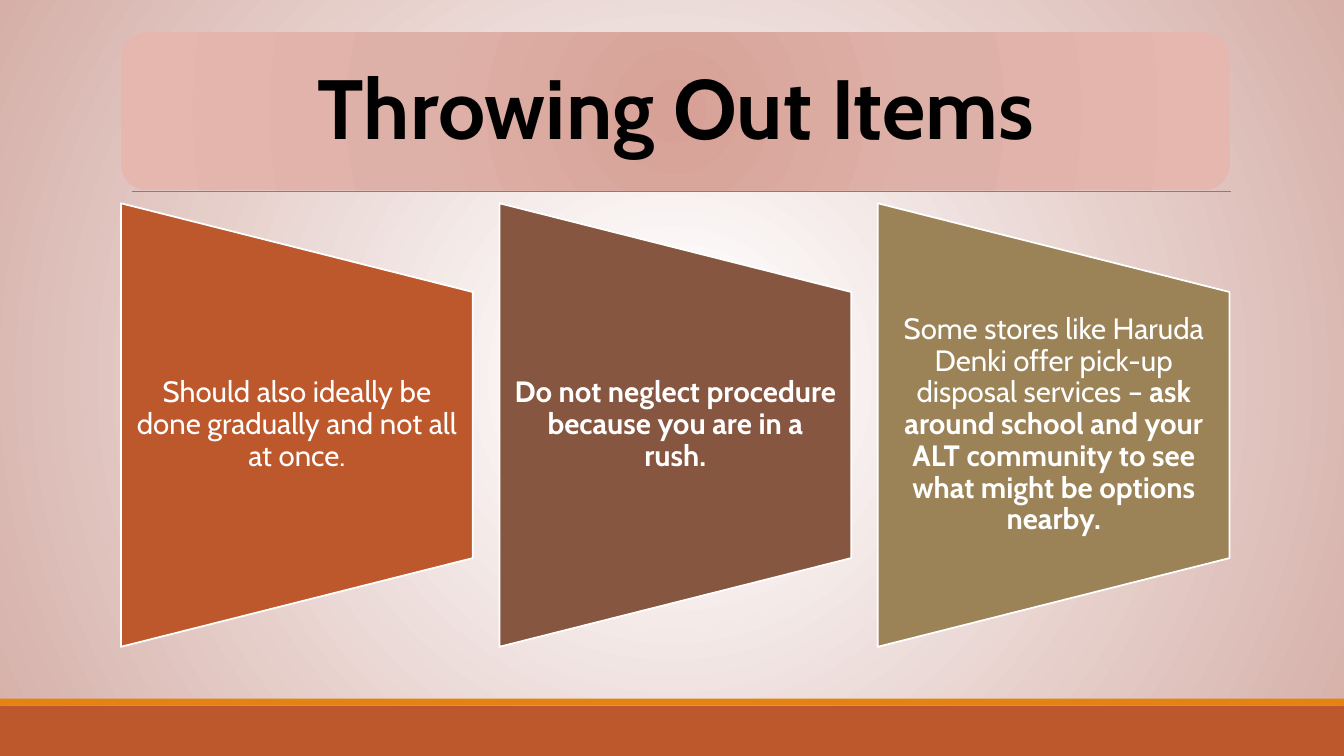
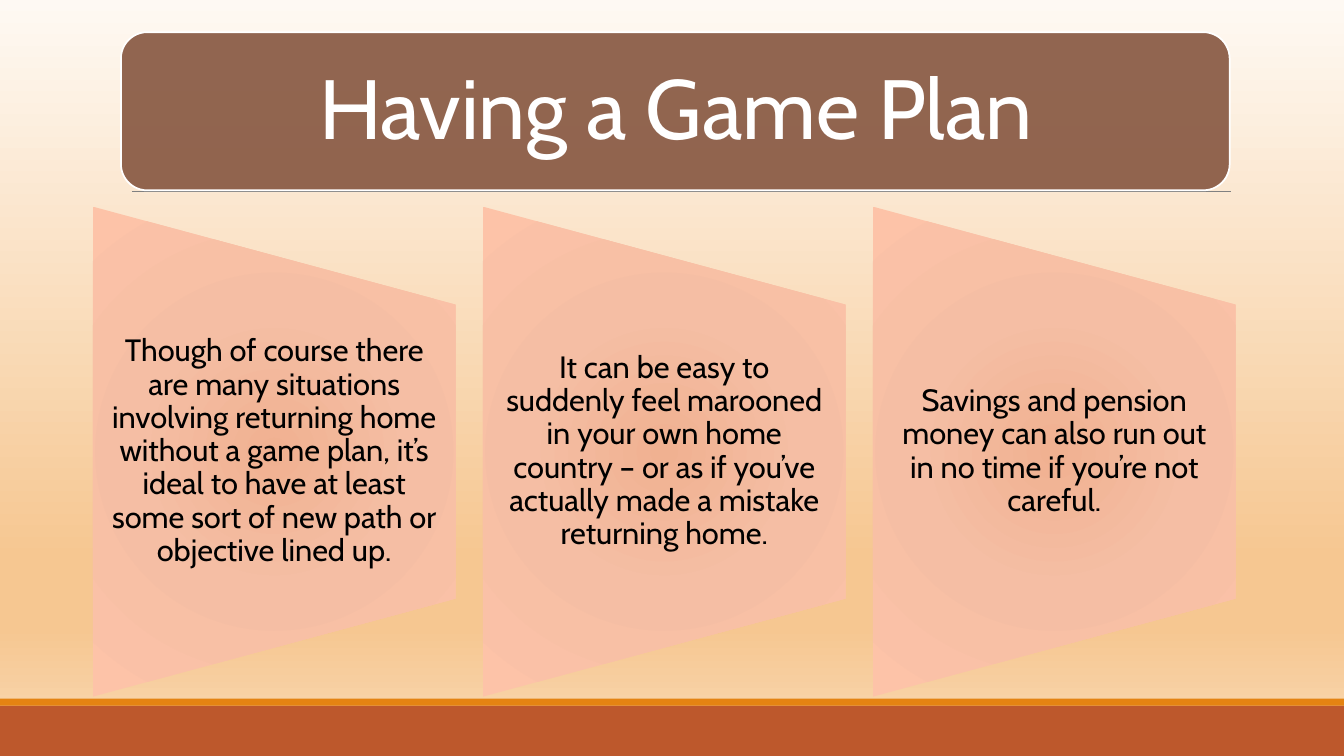
"""Build two slides with a title banner and three tapered panels each."""
import dataclasses
import typing

import pptx
import pptx.dml.color
import pptx.enum.shapes
import pptx.enum.text
import pptx.oxml
import pptx.oxml.ns
import pptx.util

Pt = pptx.util.Pt
SHAPE = pptx.enum.shapes.MSO_SHAPE
FONT = "Cabin"
WHITE, BLACK = "FFFFFF", "000000"
RUST, ORANGE, BROWN, OLIVE, GREY = "BD582C", "E48312", "865640", "9B8357", "808080"
WIDTH, HEIGHT = 960, 540
TITLE_SIZE, TITLE_INSET, PANEL_INSET = 60, 18, 10.5
TEXT_SHARE = 0.6


class Box(typing.NamedTuple):
    """Left, top, width and height in points."""
    x: float
    y: float
    w: float
    h: float

    def pts(self) -> list:
        """Return the four lengths as Pt values."""
        return [Pt(v) for v in self]


class Run(typing.NamedTuple):
    """A stretch of text with one weight."""
    text: str
    bold: bool = False


@dataclasses.dataclass(frozen=True)
class Paint:
    """A solid colour, or a gradient when stops are given."""
    color: str = WHITE
    alpha: int = 100
    stops: tuple = ()
    angle: typing.Optional[int] = None


@dataclasses.dataclass(frozen=True)
class Panel:
    """One tapered panel and its wording."""
    fill: Paint
    runs: tuple


@dataclasses.dataclass(frozen=True)
class Page:
    """Everything that differs between slides."""
    background: Paint
    title: Run
    title_color: str
    banner: Paint
    banner_line: typing.Optional[str]
    panels: tuple
    first: Box
    pitch: float
    size: float
    text_color: str
    panel_line: typing.Optional[str]


BANNER = Box(86.4, 23, 792, 113)
TITLE = Box(92.2, 28.8, 781.2, 102.2)
BANDS = ((Box(0, 504, WIDTH, 36), RUST), (Box(0, 499, WIDTH, 5), ORANGE))
RULE = (94.3, 136.8, 879.1, 136.8)

PEACH = Paint(stops=((0, "F0B191"), (45, "F5BEA4"), (100, "FDC3A8")))
PAGES = (
    Page(
        background=Paint(stops=((7, WHITE), (100, "D5AFA8"), (100, WHITE))),
        title=Run("Throwing Out Items", True),
        title_color=BLACK,
        banner=Paint(stops=((0, "D7A197"), (45, "DEB1A8"), (100, "E6B7AE"))),
        banner_line=None,
        panels=(
            Panel(Paint(RUST), (Run("Should also ideally be done gradually and not all at once."),)),
            Panel(Paint(BROWN), (Run("Do not neglect procedure because you are in a rush.", True),)),
            Panel(Paint(OLIVE), (
                Run("Some stores like Haruda Denki offer pick-up disposal services – "),
                Run("ask around school and your ALT community to see "
                    "what might be options nearby.", True))),
        ),
        first=Box(86.4, 145.2, 251.3, 316.8),
        pitch=270.3,
        size=21,
        text_color=WHITE,
        panel_line=WHITE,
    ),
    Page(
        background=Paint(stops=((0, "FEF9F3"), (74, "F6C791"), (83, "F6C791"),
                                (100, "F9DAB6")), angle=90),
        title=Run("Having a Game Plan"),
        title_color=WHITE,
        banner=Paint(BROWN, alpha=90),
        banner_line=WHITE,
        panels=(
            Panel(PEACH, (Run("Though of course there are many situations involving returning "
                              "home without a game plan, it’s ideal to have at least some sort "
                              "of new path or objective lined up."),)),
            Panel(PEACH, (Run("It can be easy to suddenly feel marooned in your own home "
                              "country – or as if you’ve actually made a mistake returning "
                              "home."),)),
            Panel(PEACH, (Run("Savings and pension money can also run out in no time if "
                              "you’re not careful."),)),
        ),
        first=Box(66.3, 147.6, 259.2, 350),
        pitch=278.6,
        size=22,
        text_color=BLACK,
        panel_line=None,
    ),
)


def rgb(color: str) -> pptx.dml.color.RGBColor:
    """Turn a hex string into a colour."""
    return pptx.dml.color.RGBColor.from_string(color)


def assign(obj: typing.Any, values: dict) -> None:
    """Set each named attribute on the object."""
    for name, value in values.items():
        setattr(obj, name, value)


def xml(body: str) -> typing.Any:
    """Parse one drawing element."""
    tag, rest = body.split(" ", 1)
    return pptx.oxml.parse_xml(f"{tag} {pptx.oxml.ns.nsdecls('a')} {rest}")


def paint_fill(fill: typing.Any, owner: typing.Any, paint: Paint) -> None:
    """Apply a solid or gradient paint to the fill held by the owner element."""
    if paint.stops:
        fill.gradient()
        grad = next(owner.iter(pptx.oxml.ns.qn("a:gradFill")))
        grad.clear()
        stops = "".join(f'<a:gs pos="{pos * 1000}"><a:srgbClr val="{color}"/></a:gs>'
                        for pos, color in paint.stops)
        grad.append(xml(f"<a:gsLst >{stops}</a:gsLst>"))
        if paint.angle is None:
            grad.append(xml('<a:path path="circle"><a:fillToRect l="100000" t="100000" '
                            'r="100000" b="100000"/></a:path>'))
        else:
            grad.append(xml(f'<a:lin ang="{paint.angle * 60000}" scaled="0"/>'))
        return
    fill.solid()
    fill.fore_color.rgb = rgb(paint.color)
    if paint.alpha < 100:
        color = next(owner.iter(pptx.oxml.ns.qn("a:srgbClr")))
        color.append(xml(f'<a:alpha val="{paint.alpha * 1000}"/>'))


def add_shape(s: typing.Any, kind: typing.Any, box: Box, paint: Paint,
              line: typing.Optional[str] = None) -> typing.Any:
    """Add a flat preset shape."""
    sp = s.shapes.add_shape(kind, *box.pts())
    sp.shadow.inherit = False
    paint_fill(sp.fill, sp.element, paint)
    if line:
        sp.line.color.rgb = rgb(line)
        sp.line.width = Pt(1.25)
    else:
        sp.line.fill.background()
    return sp


def write(sp: typing.Any, runs: tuple, size: float, color: str,
          side: float, end: float) -> None:
    """Write one centred paragraph into a shape."""
    tf = sp.text_frame
    assign(tf, {
        "word_wrap": True,
        "auto_size": pptx.enum.text.MSO_AUTO_SIZE.NONE,
        "vertical_anchor": pptx.enum.text.MSO_ANCHOR.MIDDLE,
        "margin_left": Pt(side), "margin_right": Pt(side),
        "margin_top": Pt(end), "margin_bottom": Pt(end),
    })
    p = tf.paragraphs[0]
    assign(p, {"alignment": pptx.enum.text.PP_ALIGN.CENTER, "line_spacing": 0.9})
    for run in runs:
        r = p.add_run()
        r.text = run.text
        assign(r.font, {"name": FONT, "size": Pt(size), "bold": run.bold})
        r.font.color.rgb = rgb(color)


def add_title(s: typing.Any, page: Page) -> None:
    """Place the title over its banner."""
    banner = add_shape(s, SHAPE.ROUNDED_RECTANGLE, BANNER, page.banner, page.banner_line)
    s.shapes.element.insert(2, banner.element)
    title = s.shapes.title
    assign(title, dict(zip(("left", "top", "width", "height"), TITLE.pts())))
    write(title, (page.title,), TITLE_SIZE, page.title_color, TITLE_INSET, TITLE_INSET)


def add_panel(s: typing.Any, page: Page, panel: Panel, index: int) -> None:
    """Add a sideways taper with upright text over it."""
    x, y, w, h = page.first
    x += index * page.pitch
    turned = Box(x + (w - h) / 2, y + (h - w) / 2, h, w)
    sp = add_shape(s, SHAPE.FLOWCHART_MANUAL_OPERATION, turned, panel.fill, page.panel_line)
    sp.rotation = 270
    text_h = h * TEXT_SHARE
    tb = s.shapes.add_textbox(*Box(x, y + (h - text_h) / 2, w, text_h).pts())
    write(tb, panel.runs, page.size, page.text_color, PANEL_INSET, 0)


def dress_master(prs: typing.Any, s: typing.Any) -> None:
    """Draw the bands and rule, then move them to the slide master."""
    parts = [add_shape(s, SHAPE.RECTANGLE, box, Paint(color)) for box, color in BANDS]
    rule = s.shapes.add_connector(pptx.enum.shapes.MSO_CONNECTOR.STRAIGHT,
                                  *[Pt(v) for v in RULE])
    rule.line.color.rgb = rgb(GREY)
    rule.line.width = Pt(0.5)
    rule.element.spPr.append(xml("<a:effectLst />"))
    for i, part in enumerate(parts + [rule]):
        next(part.element.iter(pptx.oxml.ns.qn("p:cNvPr"))).set("id", str(20 + i))
        prs.slide_master.shapes.element.insert(2 + i, part.element)


def main() -> None:
    """Build and save the presentation."""
    prs = pptx.Presentation()
    assign(prs, {"slide_width": Pt(WIDTH), "slide_height": Pt(HEIGHT)})
    for number, page in enumerate(PAGES):
        s = prs.slides.add_slide(prs.slide_layouts[5])
        if number == 0:
            dress_master(prs, s)
        paint_fill(s.background.fill, s.element, page.background)
        add_title(s, page)
        for index, panel in enumerate(page.panels):
            add_panel(s, page, panel, index)
    prs.save("out.pptx")


if __name__ == "__main__":
    main()
